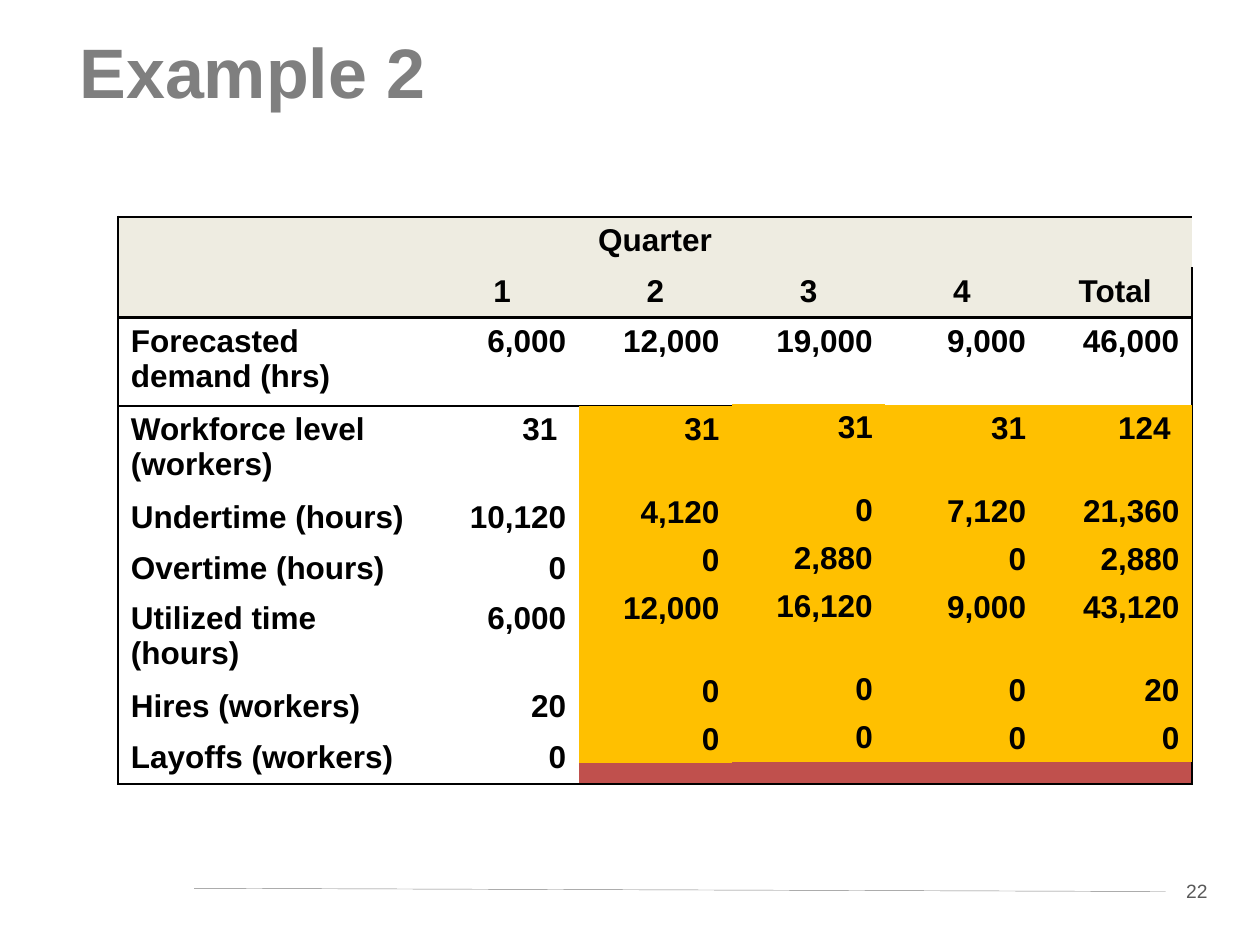
from lxml import etree
from pptx import Presentation
from pptx.dml.color import RGBColor
from pptx.enum.shapes import MSO_CONNECTOR, MSO_SHAPE
from pptx.enum.text import MSO_ANCHOR, PP_ALIGN
from pptx.oxml.ns import qn
from pptx.util import Pt

LEFT, CENTER, RIGHT = PP_ALIGN.LEFT, PP_ALIGN.CENTER, PP_ALIGN.RIGHT
TOP = MSO_ANCHOR.TOP
RECTANGLE, STRAIGHT = MSO_SHAPE.RECTANGLE, MSO_CONNECTOR.STRAIGHT
PLAIN_TABLE = "{2D5ABB26-0587-4C30-8999-92F81FD0307C}"
SIDES = ("L", "R", "T", "B")

FONT = "Arial"
BLACK, WHITE, GRAY = "000000", "FFFFFF", "7F7F7F"
BEIGE, RED, ORANGE = "EEECE1", "C0504D", "FFC000"

TABLE_LEFT, TABLE_TOP = 67.6, 123.9
LABEL_WIDTH, VALUE_WIDTH = 175.5, 87.6
QUARTERS = ["", "1", "2", "3", "4", "Total"]
DEMAND = ["Forecasted demand (hrs)", "6,000", "12,000", "19,000", "9,000", "46,000"]
FIRST_QUARTER = [
    ("Workforce level (workers)", "31 "),
    ("Undertime (hours)", "10,120"),
    ("Overtime (hours)", "0"),
    ("Utilized time (hours)", "6,000"),
    ("Hires (workers)", "20"),
    ("Layoffs (workers)", "0"),
]
# Top of each overlaid column, then its values
ANSWERS = [
    (231.9, ["31", "4,120", "0", "12,000", "0", "0"]),
    (230.9, ["31", "0", "2,880", "16,120", "0", "0"]),
    (231.3, ["31", "7,120", "0", "9,000", "0", "0"]),
    (231.3, ["124 ", "21,360", "2,880", "43,120", "20", "0"]),
]


def color(value):
    return RGBColor.from_string(value)


class SlideBuilder:
    def __init__(self, slide):
        self.slide = slide

    def set_text(self, frame, text, size, ink, bold=False, align=LEFT):
        frame.text = text
        para = frame.paragraphs[0]
        para.alignment = align
        para.font.size = Pt(size)
        for span in para.runs:
            span.font.name = FONT
            span.font.size = Pt(size)
            span.font.bold = bold
            span.font.color.rgb = color(ink)

    def title(self, text, left, top, width, height):
        box = self.slide.shapes.title
        box.left, box.top = Pt(left), Pt(top)
        box.width, box.height = Pt(width), Pt(height)
        frame = box.text_frame
        frame.vertical_anchor = TOP
        frame.margin_top = Pt(7)
        self.set_text(frame, text, 40, GRAY, bold=True)

    def page_number(self, text, left, top, width, height):
        box = self.slide.shapes.add_shape(
            RECTANGLE, Pt(left), Pt(top), Pt(width), Pt(height))
        box.shadow.inherit = False
        box.fill.solid()
        box.fill.fore_color.rgb = color(WHITE)
        box.line.fill.background()
        box.text_frame.vertical_anchor = TOP
        self.set_text(box.text_frame, text, 11, "595959", align=CENTER)
        return box

    def rule_to(self, box, left, top):
        rule = self.slide.shapes.add_connector(
            STRAIGHT, Pt(left), Pt(top), box.left, box.top)
        rule.end_connect(box, 1)
        rule.line.color.rgb = color("808080")
        rule.line.width = Pt(0.25)
        etree.SubElement(rule._element.spPr, qn("a:effectLst"))

    def table(self, left, top, widths, heights):
        frame = self.slide.shapes.add_table(
            len(heights), len(widths), Pt(left), Pt(top),
            Pt(sum(widths)), Pt(sum(heights)))
        table = frame.table
        table.first_row = table.horz_banding = False
        table._tbl.tblPr.find(qn("a:tableStyleId")).text = PLAIN_TABLE
        for column, width in zip(table.columns, widths):
            column.width = Pt(width)
        for row, height in zip(table.rows, heights):
            row.height = Pt(height)
        return table

    def cell(self, cell, text, align, fill=None, borders=""):
        cell.margin_bottom = Pt(3)
        cell.vertical_anchor = TOP
        self.set_text(cell.text_frame, text, 18, BLACK, bold=True, align=align)
        # Borders come before the fill in the cell properties
        properties = cell._tc.get_or_add_tcPr()
        for side in SIDES:
            if side in borders:
                line = etree.SubElement(properties, qn(f"a:ln{side}"), w=str(Pt(1.5)))
                solid = etree.SubElement(line, qn("a:solidFill"))
                etree.SubElement(solid, qn("a:srgbClr"), val=BLACK)
        if fill:
            cell.fill.solid()
            cell.fill.fore_color.rgb = color(fill)
        else:
            cell.fill.background()


def main():
    deck = Presentation()
    deck.slide_width, deck.slide_height = Pt(720), Pt(540)
    page = SlideBuilder(deck.slides.add_slide(deck.slide_layouts[5]))

    # Footer and title
    number = page.page_number("22", 666, 499, 36, 20.9)
    page.rule_to(number, 110.9, 507.6)
    page.title("Example 2", 38.2, 9.4, 643.7, 72.7)

    # Main table: header, demand and first-quarter plan
    single, double = 28.8, 50.4
    widths = [LABEL_WIDTH] + [VALUE_WIDTH] * 5
    heights = [single, single, double, double, single, single, double, single, single]
    plan = page.table(TABLE_LEFT, TABLE_TOP, widths, heights)
    rows = [["Quarter"] + [""] * 5, QUARTERS, DEMAND]
    rows += [[label, value] + [""] * 4 for label, value in FIRST_QUARTER]
    last_row, last_column = len(rows) - 1, len(widths) - 1
    for r, values in enumerate(rows):
        for c, value in enumerate(values):
            borders = "L" * (c == 0) + "R" * (c == last_column)
            borders += "T" * (r in (0, 2)) + "B" * (r in (1, last_row))
            if r < 2:
                fill, align = BEIGE, CENTER
            else:
                fill = RED if r > 2 and c > 1 else None
                align = RIGHT if c else LEFT
            page.cell(plan.cell(r, c), value, align, fill, borders)
    plan.cell(0, 0).merge(plan.cell(0, last_column))

    # Answer columns laid over the remaining quarters and the total
    single, double = 27.4, 47.4
    heights = [double, single, single, double, single, single]
    first_left = TABLE_LEFT + LABEL_WIDTH + VALUE_WIDTH
    for index, (top, values) in enumerate(ANSWERS):
        left = first_left + index * VALUE_WIDTH
        answer = page.table(left, top, [VALUE_WIDTH], heights)
        for r, value in enumerate(values):
            page.cell(answer.cell(r, 0), value, RIGHT, ORANGE)

    deck.save("out.pptx")


if __name__ == "__main__":
    main()
